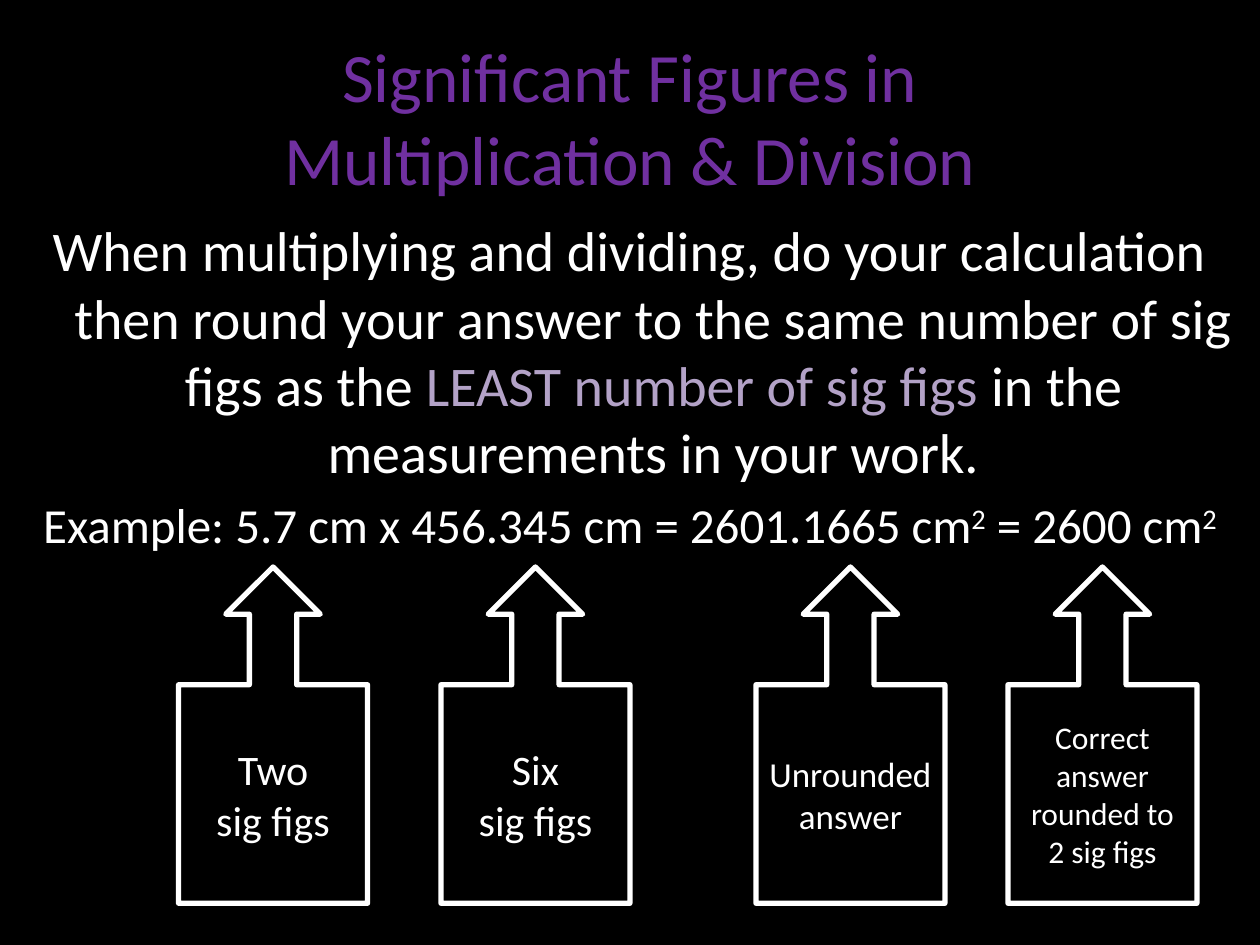
"""Build the slide on significant figures in multiplication and division."""
from dataclasses import dataclass

from pptx import Presentation
from pptx import util as u
from pptx.dml import color as c
from pptx.enum import shapes, text


@dataclass(frozen=True)
class Theme:
    font: str = "Calibri"
    black: str = "000000"
    white: str = "FFFFFF"
    purple: str = "7030A0"
    lilac: str = "B3A2C7"
    title: float = 39.6
    body: int = 32
    example: int = 28
    label: int = 24
    label_mid: int = 20
    label_small: int = 18


T = Theme()


def add_run(p, words, size, color=T.white, raised=False):
    r = p.add_run()
    r.text = words
    r.font.name = T.font
    r.font.size = u.Pt(size)
    r.font.color.rgb = c.RGBColor.from_string(color)
    if raised:
        r.font._element.set("baseline", "30000")


prs = Presentation()
prs.slide_width, prs.slide_height = u.Cm(25.4), u.Cm(19.05)
s = prs.slides.add_slide(prs.slide_layouts[6])
s.background.fill.solid()
s.background.fill.fore_color.rgb = c.RGBColor.from_string(T.black)

tf = s.shapes.add_textbox(u.Cm(1.27), u.Cm(0.76), u.Cm(22.86), u.Cm(3.18)).text_frame
tf.word_wrap = True
tf.vertical_anchor = text.MSO_ANCHOR.MIDDLE
p = tf.paragraphs[0]
p.alignment = text.PP_ALIGN.CENTER
add_run(p, "Significant Figures in", T.title, T.purple)
p.add_line_break()
add_run(p, "Multiplication & Division", T.title, T.purple)

tf = s.shapes.add_textbox(0, u.Cm(4.23), u.Cm(25.4), u.Cm(12.78)).text_frame
tf.word_wrap = True
rule = [
    ("When multiplying and dividing, do your calculation then round your answer "
     "to the same number of sig figs as the ", T.white, False),
    ("LEAST number of sig figs ", T.lilac, False),
    ("in the measurements in your work.", T.white, False),
]
example = [
    ("Example: 5.7 cm x 456.345 cm = 2601.1665 cm", T.white, False),
    ("2", T.white, True),
    (" = 2600 cm", T.white, False),
    ("2", T.white, True),
]
for p, size, runs in ((tf.paragraphs[0], T.body, rule),
                      (tf.add_paragraph(), T.example, example)):
    p.alignment = text.PP_ALIGN.CENTER
    p.space_before = u.Pt(size * 0.2)
    pPr = p._p.get_or_add_pPr()
    pPr.set("marL", str(u.Cm(0.95)))
    pPr.set("indent", str(-u.Cm(0.95)))
    for words, color, raised in runs:
        add_run(p, words, size, color, raised)

callouts = [
    (3.6, T.label, ["Two", "sig figs"]),
    (8.89, T.label, ["Six", "sig figs"]),
    (15.24, T.label_mid, ["Unrounded", "answer"]),
    (20.32, T.label_small, ["Correct", "answer", "rounded to", "2 sig figs"]),
]
for left, size, lines in callouts:
    sp = s.shapes.add_shape(shapes.MSO_SHAPE.UP_ARROW_CALLOUT,
                            u.Cm(left), u.Cm(11.43), u.Cm(3.81), u.Cm(6.78))
    sp.shadow.inherit = False
    sp.fill.solid()
    sp.fill.fore_color.rgb = c.RGBColor.from_string(T.black)
    sp.line.color.rgb = c.RGBColor.from_string(T.white)
    sp.line.width = u.Pt(3)
    tf = sp.text_frame
    tf.word_wrap = True
    tf.vertical_anchor = text.MSO_ANCHOR.MIDDLE
    for i, line in enumerate(lines):
        p = tf.add_paragraph() if i else tf.paragraphs[0]
        p.alignment = text.PP_ALIGN.CENTER
        add_run(p, line, size)

prs.save("out.pptx")
